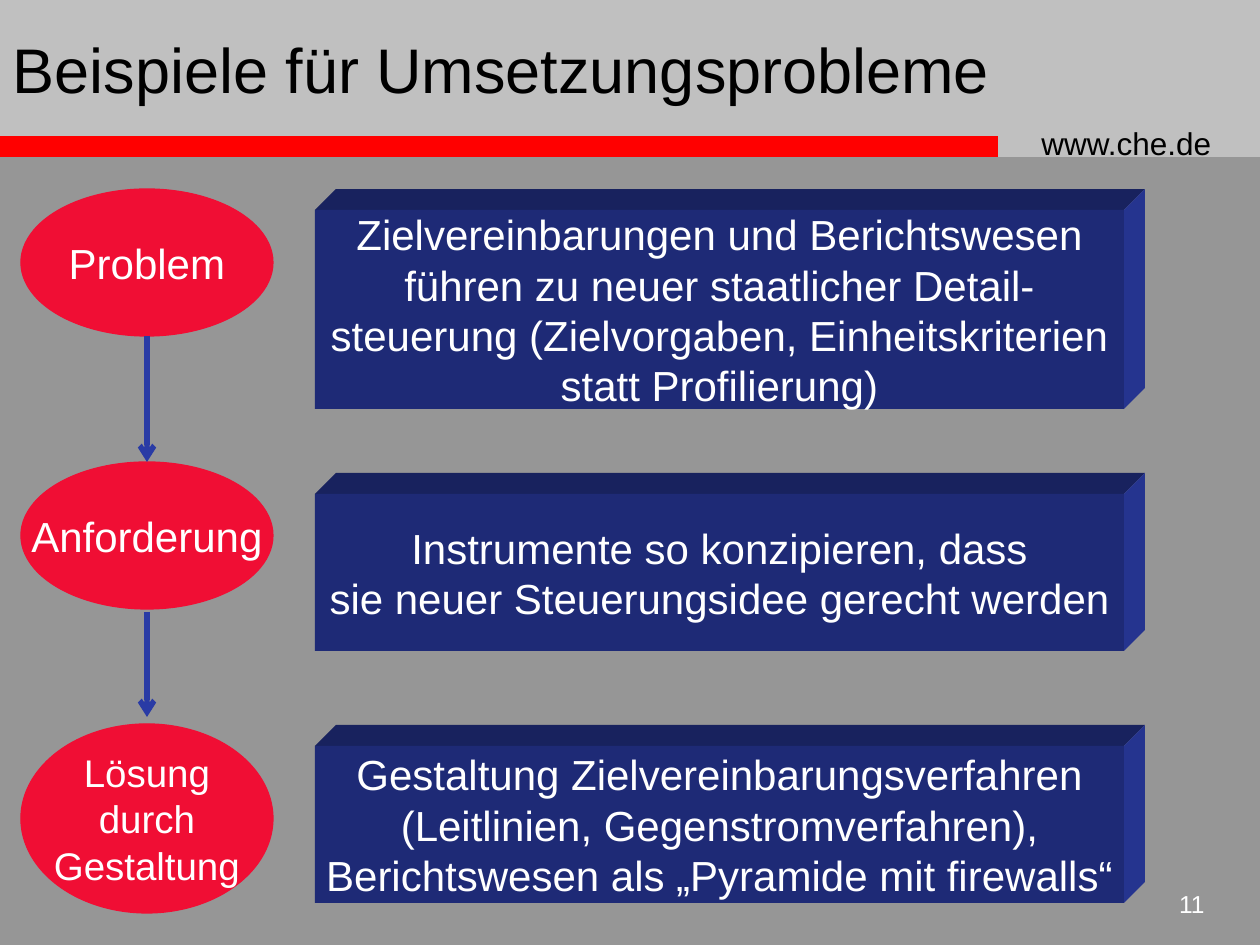
from dataclasses import dataclass

from lxml import etree
from pptx import Presentation
from pptx.dml.color import RGBColor
from pptx.enum.shapes import MSO_CONNECTOR, MSO_SHAPE
from pptx.enum.text import MSO_ANCHOR, PP_ALIGN
from pptx.oxml.ns import qn
from pptx.util import Emu, Pt

EMU_PER_PX = 914400 / 126
RECTANGLE, OVAL = MSO_SHAPE.RECTANGLE, MSO_SHAPE.OVAL
STRAIGHT = MSO_CONNECTOR.STRAIGHT
LEFT, CENTER, RIGHT = PP_ALIGN.LEFT, PP_ALIGN.CENTER, PP_ALIGN.RIGHT
TOP, MIDDLE = MSO_ANCHOR.TOP, MSO_ANCHOR.MIDDLE


@dataclass(frozen=True)
class Theme:
    font: str = "Arial"
    background: str = "969696"
    banner: str = "C0C0C0"
    bar: str = "FF0000"
    oval: str = "F00E34"
    arrow: str = "293BA5"
    block_front: str = "1E2A76"
    block_top: str = "18225E"
    block_side: str = "25348F"
    dark: str = "000000"
    light: str = "FFFFFF"
    title_size: int = 36
    body_size: int = 24
    small_size: int = 22
    address_size: int = 18
    number_size: int = 14


@dataclass(frozen=True)
class Area:
    left: int
    top: int
    width: int
    height: int


@dataclass(frozen=True)
class Step:
    oval_top: int
    oval_height: int
    label: str
    label_size: int
    block_top: int
    block_height: int
    message: str


THEME = Theme()
OVAL_LEFT, OVAL_WIDTH = 21, 252
BLOCK_LEFT, BLOCK_WIDTH, BLOCK_DEPTH = 315, 809, 21

STEPS = (
    Step(189, 147, "Problem", THEME.body_size, 210, 199,
         "Zielvereinbarungen und Berichtswesen\n"
         "führen zu neuer staatlicher Detail-\n"
         "steuerung (Zielvorgaben, Einheitskriterien\n"
         "statt Profilierung)"),
    Step(462, 147, "Anforderung", THEME.body_size, 494, 157,
         "Instrumente so konzipieren, dass\n"
         "sie neuer Steuerungsidee gerecht werden"),
    Step(724, 189, "Lösung\ndurch\nGestaltung", THEME.small_size, 746, 157,
         "Gestaltung Zielvereinbarungsverfahren\n"
         "(Leitlinien, Gegenstromverfahren),\n"
         "Berichtswesen als „Pyramide mit firewalls“"),
)
ARROWS = ((336, 462), (612, 717))


def px(length: int) -> Emu:
    return Emu(round(length * EMU_PER_PX))


def frame(area: Area) -> tuple:
    return px(area.left), px(area.top), px(area.width), px(area.height)


def write_text(box, text: str, *, size: int, color: str, align=LEFT,
               anchor=TOP, wrap: bool = True) -> None:
    text_frame = box.text_frame
    text_frame.word_wrap = wrap
    text_frame.vertical_anchor = anchor
    text_frame.text = text
    for para in text_frame.paragraphs:
        para.alignment = align
        para.font.name = THEME.font
        para.font.size = Pt(size)
        para.font.color.rgb = RGBColor.from_string(color)


def paint(shape, color: str, outlined: bool = False) -> None:
    shape.shadow.inherit = False
    shape.fill.solid()
    shape.fill.fore_color.rgb = RGBColor.from_string(color)
    if outlined:
        shape.line.color.rgb = RGBColor.from_string(color)
        shape.line.width = Pt(0.75)
    else:
        shape.line.fill.background()


def draw_shape(page, kind, area: Area, color: str, outlined: bool = False):
    shape = page.shapes.add_shape(kind, *frame(area))
    paint(shape, color, outlined)
    return shape


def draw_face(page, points: list, color: str) -> None:
    builder = page.shapes.build_freeform(*points[0], scale=EMU_PER_PX)
    builder.add_line_segments(points[1:], close=True)
    paint(builder.convert_to_shape(), color)


def draw_block(page, area: Area, text: str) -> None:
    left, top = area.left, area.top
    right, bottom = left + area.width, top + area.height
    back_right, back_top = right + BLOCK_DEPTH, top - BLOCK_DEPTH
    draw_face(page, [(left, top), (left + BLOCK_DEPTH, back_top),
                     (back_right, back_top), (right, top)], THEME.block_top)
    draw_face(page, [(right, top), (back_right, back_top),
                     (back_right, bottom - BLOCK_DEPTH), (right, bottom)],
              THEME.block_side)
    front = draw_shape(page, RECTANGLE, area, THEME.block_front)
    write_text(front, text, size=THEME.body_size, color=THEME.light,
               align=CENTER, anchor=MIDDLE, wrap=False)


def draw_step(page, step: Step) -> None:
    oval_area = Area(OVAL_LEFT, step.oval_top, OVAL_WIDTH, step.oval_height)
    oval = draw_shape(page, OVAL, oval_area, THEME.oval, outlined=True)
    write_text(oval, step.label, size=step.label_size, color=THEME.light,
               align=CENTER, anchor=MIDDLE, wrap=False)
    draw_block(page, Area(BLOCK_LEFT, step.block_top, BLOCK_WIDTH,
                          step.block_height), step.message)


def draw_arrow(page, start: int, end: int) -> None:
    center = px(OVAL_LEFT + OVAL_WIDTH // 2)
    arrow = page.shapes.add_connector(STRAIGHT, center, px(start), center, px(end))
    arrow.line.color.rgb = RGBColor.from_string(THEME.arrow)
    arrow.line.width = Pt(3)
    etree.SubElement(arrow.line._get_or_add_ln(), qn("a:tailEnd"), type="arrow")
    etree.SubElement(arrow._element.spPr, qn("a:effectLst"))


def main() -> None:
    deck = Presentation()
    deck.slide_width, deck.slide_height = px(1260), px(945)
    page = deck.slides.add_slide(deck.slide_layouts[5])
    page.background.fill.solid()
    page.background.fill.fore_color.rgb = RGBColor.from_string(THEME.background)

    # Header: banner, red bar, web address
    draw_shape(page, RECTANGLE, Area(0, 0, 1260, 157), THEME.banner)
    draw_shape(page, RECTANGLE, Area(0, 136, 998, 21), THEME.bar)
    address = page.shapes.add_textbox(*frame(Area(1029, 118, 221, 50)))
    write_text(address, "www.che.de", size=THEME.address_size, color=THEME.dark)

    # Title, brought in front of the banner
    title = page.shapes.title
    title.left, title.top, title.width, title.height = frame(Area(0, 0, 1018, 136))
    write_text(title, "Beispiele für Umsetzungsprobleme",
               size=THEME.title_size, color=THEME.dark, anchor=MIDDLE)
    page.shapes._spTree.append(title._element)

    # Steps and the arrows between them
    for step in STEPS:
        draw_step(page, step)
    for start, end in ARROWS:
        draw_arrow(page, start, end)

    # Page number
    number = page.shapes.add_textbox(*frame(Area(1144, 883, 73, 53)))
    write_text(number, "11", size=THEME.number_size, color=THEME.light, align=RIGHT)

    deck.save("out.pptx")


if __name__ == "__main__":
    main()
